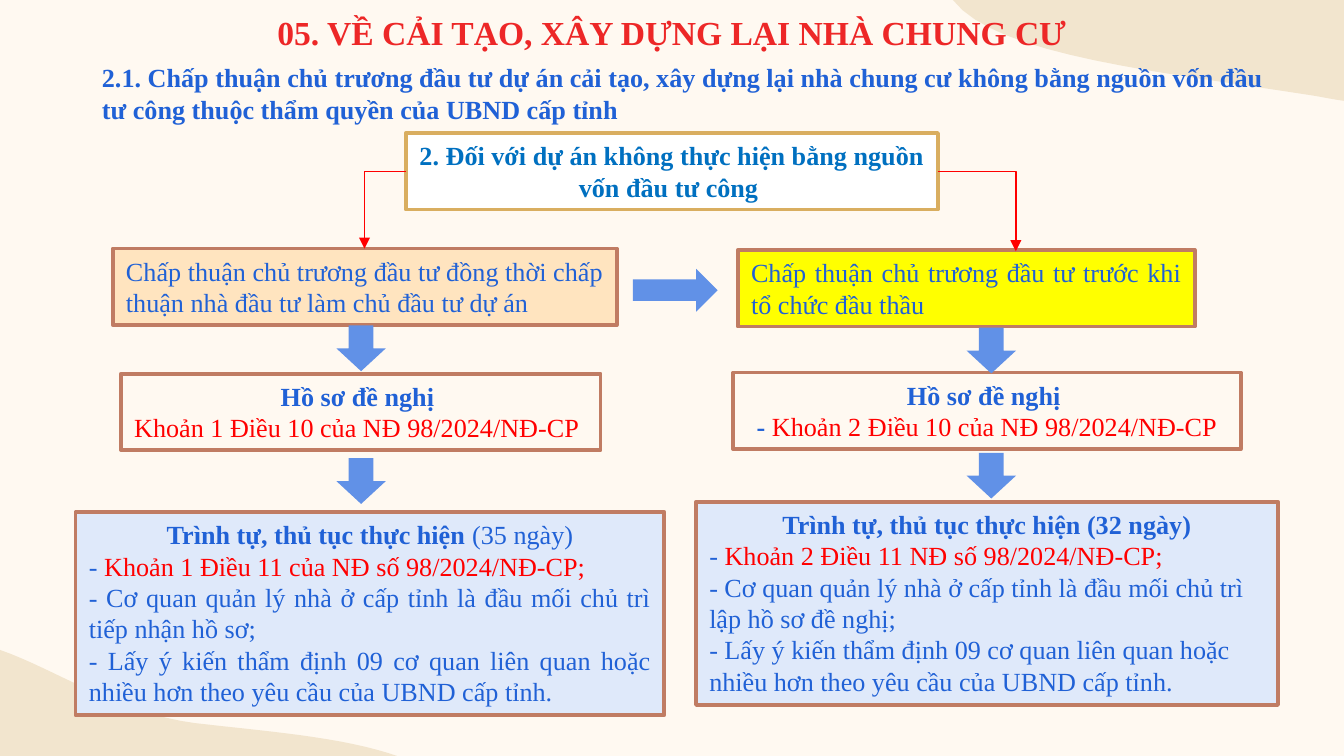
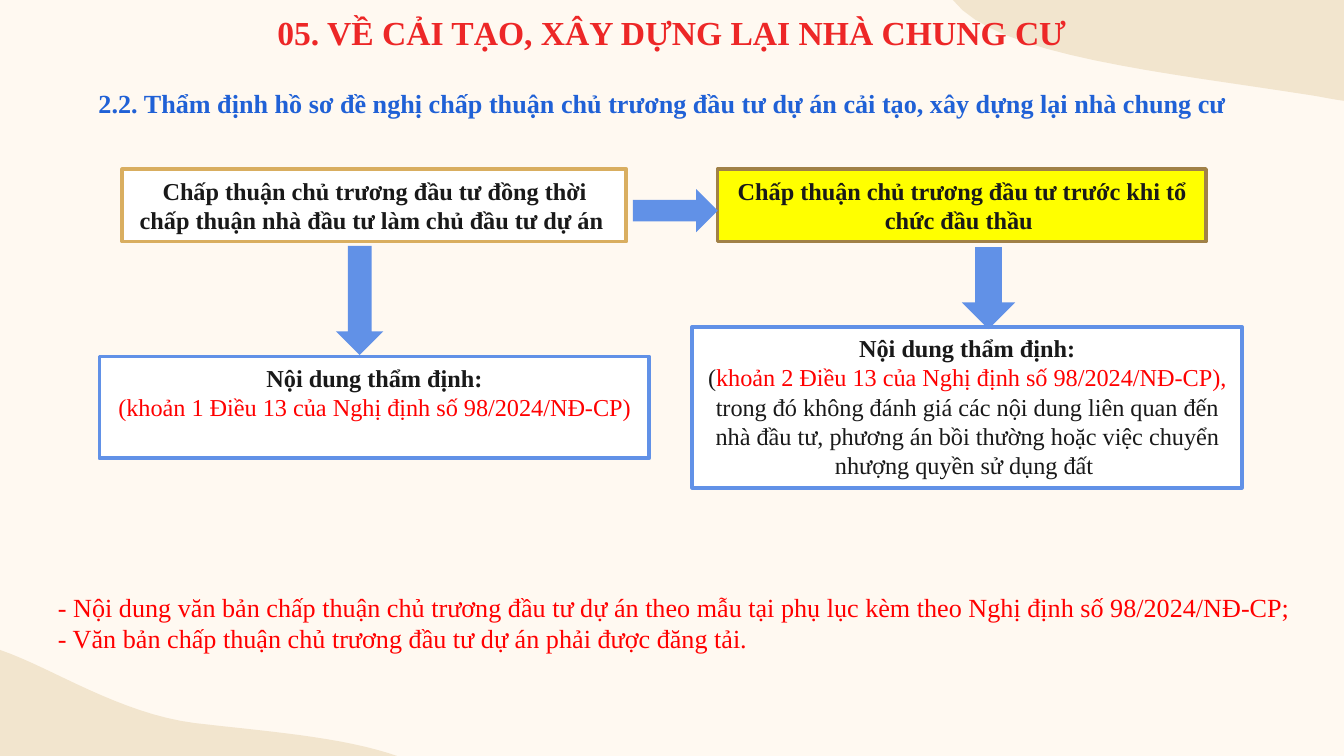
from lxml import etree
from pptx import Presentation
from pptx.dml.color import RGBColor
from pptx.enum.shapes import MSO_CONNECTOR, MSO_SHAPE
from pptx.enum.text import MSO_ANCHOR, PP_ALIGN
from pptx.oxml.ns import qn
from pptx.util import Pt

RECT = MSO_SHAPE.RECTANGLE
RIGHT = MSO_SHAPE.RIGHT_ARROW
DOWN = MSO_SHAPE.DOWN_ARROW
ELBOW = MSO_CONNECTOR.ELBOW
TOP, BOTTOM = MSO_ANCHOR.TOP, MSO_ANCHOR.BOTTOM
L, C, J = PP_ALIGN.LEFT, PP_ALIGN.CENTER, PP_ALIGN.JUSTIFY

FONT = "Times New Roman"
COLORS = {
    "cream": "FFF9F1", "sand": "F2E5CE", "title": "ED2727",
    "blue": "2061D6", "azure": "0070C0", "red": "FF0000",
    "ink": "191919", "white": "FFFFFF", "gold": "D9AE60",
    "brown": "A18147", "clay": "C07C63", "peach": "FFE4BF",
    "yellow": "FFFF00", "pale": "DFE9FA", "sky": "6191E7",
}
WIDE, HIGH = 720, 405
TITLE = "05. VỀ CẢI TẠO, XÂY DỰNG LẠI NHÀ CHUNG CƯ"

# Corner waves: a start point, then cubic curves (3 points) or lines (1 point)
WAVES = [
    ((WIDE, 0), [[(WIDE, 54)],
                 [(714.2, 53.3), (708.5, 52), (702.7, 51.1)],
                 [(625.7, 38.9), (533.5, 30.2), (510.5, 0)]]),
    ((0, 348.2), [[(28, 357.8), (64, 382.3), (104.4, 387.4)],
                  [(141, 391.7), (182.9, 394.6), (212.7, HIGH)],
                  [(0, HIGH)]]),
]


def rgb(name):
    return RGBColor.from_string(COLORS[name])


def curve(start, ctrl, steps=16):
    """Points along a cubic curve."""
    pts = [start, *ctrl]
    for i in range(1, steps + 1):
        t = i / steps
        k = ((1 - t) ** 3, 3 * t * (1 - t) ** 2, 3 * t * t * (1 - t), t ** 3)
        yield tuple(sum(w * p[a] for w, p in zip(k, pts)) for a in (0, 1))


def put(para, text, size=14, color="blue", bold=False):
    run = para.add_run()
    run.text = text
    run.font.name = FONT
    run.font.size = Pt(size)
    run.font.bold = bold
    run.font.color.rgb = rgb(color)


class Deck:
    def __init__(self):
        self.prs = Presentation()
        self.prs.slide_width, self.prs.slide_height = Pt(WIDE), Pt(HIGH)
        back = self.prs.slide_master.background.fill
        back.solid()
        back.fore_color.rgb = rgb("cream")
        self.slide = None

    def page(self):
        self.slide = self.prs.slides.add_slide(self.prs.slide_layouts[6])
        for start, parts in WAVES:
            self.wave(start, parts)
        frame = self.text((0, 0.7, WIDE, 34.6),
                          [(C, (TITLE, "title", True))], size=18)
        frame.vertical_anchor = BOTTOM
        frame.margin_top = frame.margin_bottom = Pt(7.2)

    def paint(self, shape, fill=None, line=None):
        shape.shadow.inherit = False
        if fill:
            shape.fill.solid()
            shape.fill.fore_color.rgb = rgb(fill)
        else:
            shape.fill.background()
        if line:
            shape.line.color.rgb = rgb(line)
            shape.line.width = Pt(2)
        else:
            shape.line.fill.background()

    def wave(self, start, parts):
        pts = [start]
        for part in parts:
            pts += curve(pts[-1], part) if len(part) == 3 else part
        pts = [(Pt(x), Pt(y)) for x, y in pts]
        form = self.slide.shapes.build_freeform(*pts[0])
        form.add_line_segments(pts[1:])
        self.paint(form.convert_to_shape(), "sand")

    def fill_in(self, frame, paras, size, indent=0):
        """Each paragraph is (align, run, ...), each run (text, color, bold)."""
        frame.word_wrap = True
        frame.vertical_anchor = TOP
        for i, (align, *runs) in enumerate(paras):
            para = frame.add_paragraph() if i else frame.paragraphs[0]
            para.alignment = align
            if indent:
                props = para._p.get_or_add_pPr()
                props.set("marL", str(Pt(indent)))
                props.set("indent", "0")
            for text, color, bold in runs:
                put(para, text, size=size, color=color, bold=bold)

    def text(self, area, paras, size=14, indent=0):
        frame = self.slide.shapes.add_textbox(*map(Pt, area)).text_frame
        self.fill_in(frame, paras, size, indent)
        return frame

    def box(self, area, paras, fill=None, line="clay", size=14):
        shape = self.slide.shapes.add_shape(RECT, *map(Pt, area))
        self.paint(shape, fill, line)
        self.fill_in(shape.text_frame, paras, size)

    def arrow(self, kind, *area):
        self.paint(self.slide.shapes.add_shape(kind, *map(Pt, area)), "sky")

    def bend(self, *ends):
        link = self.slide.shapes.add_connector(ELBOW, *map(Pt, ends))
        link.line.color.rgb = rgb("red")
        link.line.width = Pt(0.75)
        props = link._element.spPr
        props.find(qn("a:prstGeom")).set("prst", "bentConnector2")
        tail = etree.SubElement(props.find(qn("a:ln")), qn("a:tailEnd"))
        tail.set("type", "triangle")
        etree.SubElement(props, qn("a:effectLst"))


def approve(deck):
    deck.page()
    deck.text((47.5, 29.5, 637.2, 41), [
        (L, ("2.1. Chấp thuận chủ trương đầu tư dự án cải tạo, xây dựng lại nhà "
             "chung cư không bằng nguồn vốn đầu tư công thuộc thẩm quyền của "
             "UBND cấp tỉnh", "blue", True))])
    deck.box((217.4, 71.3, 285.1, 41), [
        (C, ("2. Đối với dự án không thực hiện bằng nguồn vốn đầu tư công ",
             "azure", True))], "white", "gold")

    # Left branch
    deck.box((60.4, 133.2, 270, 41), [
        (J, ("Chấp thuận chủ trương đầu tư đồng thời chấp thuận nhà đầu tư làm "
             "chủ đầu tư dự án ", "blue", False))], "peach")
    deck.box((64.8, 200.2, 257, 41), [
        (C, ("Hồ sơ đề nghị ", "blue", True)),
        (J, ("Khoản 1 Điều 10 của NĐ 98/2024/NĐ-CP", "red", False))])
    deck.box((40.5, 274.3, 315.4, 108.9), [
        (C, ("Trình tự, thủ tục thực hiện ", "blue", True),
         ("(35 ngày)", "blue", False)),
        (J, ("- ", "blue", False),
         ("Khoản 1 Điều 11 của NĐ số 98/2024/NĐ-CP; ", "red", False)),
        (J, ("- Cơ quan quản lý nhà ở cấp tỉnh là đầu mối chủ trì tiếp nhận "
             "hồ sơ; ", "blue", False)),
        (J, ("- Lấy ý kiến thẩm định 09 cơ quan liên quan hoặc nhiều hơn theo "
             "yêu cầu của UBND cấp tỉnh. ", "blue", False))], "pale")

    # Right branch
    deck.box((395.3, 134, 244.8, 41), [
        (J, ("Chấp thuận chủ trương đầu tư trước khi tổ chức đầu thầu ",
             "blue", False))], "yellow")
    deck.box((392.8, 199.6, 272, 41), [
        (C, ("Hồ sơ đề nghị ", "blue", True)),
        (C, ("- ", "blue", True),
         ("Khoản 2 Điều 10 của NĐ 98/2024/NĐ-CP", "red", False))])
    deck.box((372.9, 268.8, 311.8, 108.9), [
        (C, ("Trình tự, thủ tục thực hiện (32 ngày)", "blue", True)),
        (L, ("- ", "blue", False),
         ("Khoản 2 Điều 11 NĐ số 98/2024/NĐ-CP;", "red", False)),
        (L, ("- Cơ quan quản lý nhà ở cấp tỉnh là đầu mối chủ trì lập hồ sơ "
             "đề nghị;", "blue", False)),
        (L, ("- Lấy ý kiến thẩm định 09 cơ quan liên quan hoặc nhiều hơn theo "
             "yêu cầu của UBND cấp tỉnh.", "blue", False))], "pale")

    # Arrows and links
    deck.arrow(RIGHT, 339, 144, 45.5, 23)
    for x, y in ((180.2, 174.4), (180.2, 245.5), (517.8, 242.6), (517.8, 175.6)):
        deck.arrow(DOWN, x, y, 26.5, 24.5)
    deck.bend(217.4, 92, 195.3, 133.2)
    deck.bend(502.5, 92, 544.2, 134.6)


def review(deck):
    deck.page()
    deck.text((45.7, 43.2, 628.6, 24.5), [
        (L, ("2.2. Thẩm định hồ sơ đề nghị chấp thuận chủ trương đầu tư dự án "
             "cải tạo, xây dựng lại nhà chung cư", "blue", True))])

    # Two kinds of approval
    deck.box((65.5, 90.6, 270, 38.8), [
        (C, ("Chấp thuận chủ trương đầu tư đồng thời chấp thuận nhà đầu tư làm "
             "chủ đầu tư dự án ", "ink", True))], "white", "gold", 13)
    deck.box((384.4, 90.6, 261.7, 38.8), [
        (C, ("Chấp thuận chủ trương đầu tư trước khi tổ chức đầu thầu ",
             "ink", True))], "yellow", "brown", 13)

    # What is reviewed
    head = (C, ("Nội dung thẩm định:", "ink", True))
    deck.box((53.3, 191, 294.5, 54.5), [
        head,
        (C, ("(khoản 1 Điều 13 của Nghị định số 98/2024/NĐ-CP)",
             "red", False))], "white", "sky", 13)
    deck.box((370.8, 175.1, 294.5, 86.2), [
        head,
        (C, ("(", "ink", False),
         ("khoản 2 Điều 13 của Nghị định số 98/2024/NĐ-CP), ", "red", False),
         ("trong đó không đánh giá các nội dung liên quan đến nhà đầu tư, "
          "phương án bồi thường hoặc việc chuyển nhượng quyền sử dụng đất ",
          "ink", False))], "white", "sky", 13)

    # Closing points
    deck.text((12, 313.2, 696.2, 72), [
        (L, ("- Nội dung văn bản chấp thuận chủ trương đầu tư dự án theo mẫu tại "
             "phụ lục kèm theo Nghị định số 98/2024/NĐ-CP;", "red", False)),
        (L, ("- Văn bản chấp thuận chủ trương đầu tư dự án phải được đăng tải.",
             "red", False))], indent=12)

    # Arrows
    deck.arrow(RIGHT, 339, 101.3, 45.5, 23)
    deck.arrow(DOWN, 180, 131.8, 25.4, 58.4)
    deck.arrow(DOWN, 515.3, 132.4, 28.5, 43.9)


def main():
    deck = Deck()
    approve(deck)
    review(deck)
    deck.prs.save("out.pptx")


if __name__ == "__main__":
    main()
